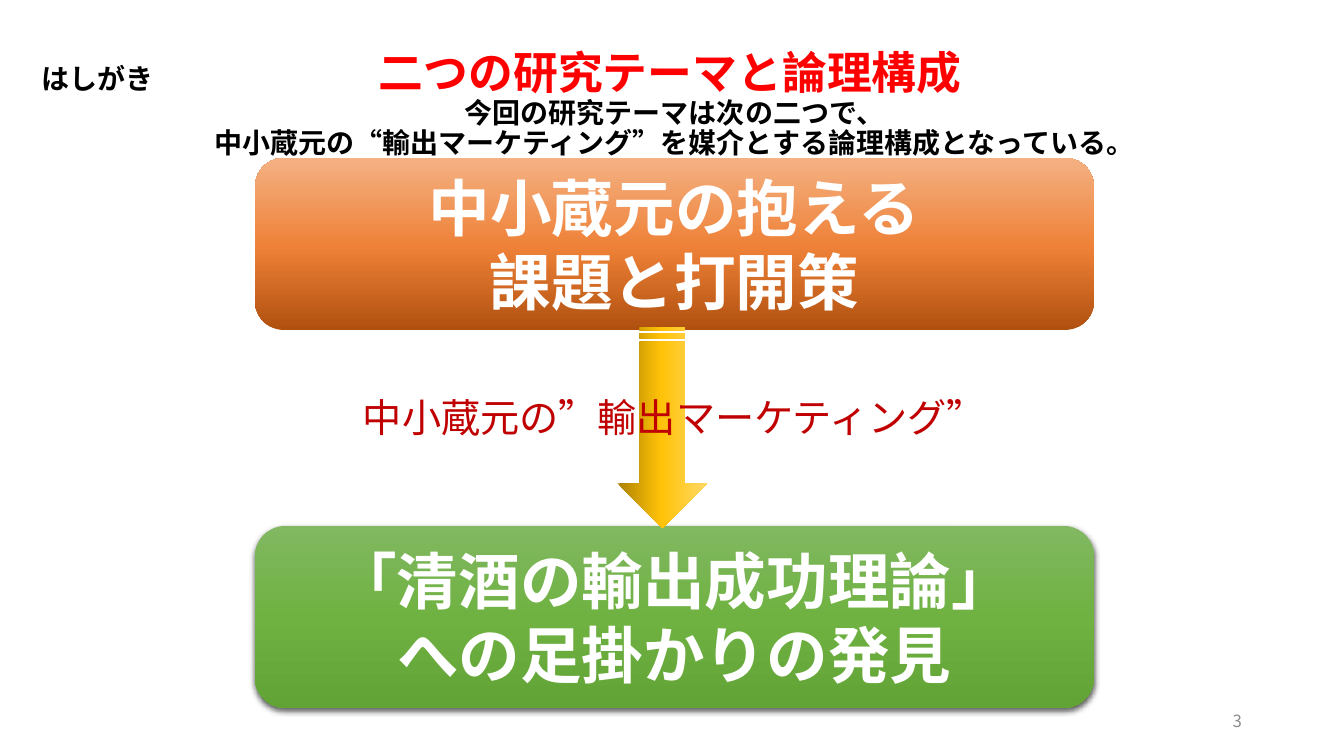
from lxml.etree import SubElement
from pptx import Presentation
from pptx.dml.color import RGBColor
from pptx.enum.shapes import MSO_SHAPE
from pptx.enum.text import MSO_ANCHOR, PP_ALIGN
from pptx.oxml.ns import qn
from pptx.util import Pt

BLACK = RGBColor(0x00, 0x00, 0x00)
WHITE = RGBColor(0xFF, 0xFF, 0xFF)
RED = RGBColor(0xFF, 0x00, 0x00)
DARK_RED = RGBColor(0xC0, 0x00, 0x00)
GRAY = RGBColor(0x8C, 0x8C, 0x8C)

# Gradient stops: (position in percent, colour)
ORANGE = [(0, RGBColor(0xB0, 0x50, 0x0F)), (48, RGBColor(0xEE, 0x81, 0x37)),
          (100, RGBColor(0xF4, 0xB1, 0x83))]
GREEN = [(0, RGBColor(0x81, 0xB8, 0x61)), (50, RGBColor(0x6F, 0xB2, 0x42)),
         (100, RGBColor(0x62, 0xA3, 0x36))]
GOLD = [(0, RGBColor(0xAB, 0x81, 0x00)), (48, RGBColor(0xFF, 0xC2, 0x08)),
        (100, RGBColor(0xFF, 0xD9, 0x66))]
UPWARD, DOWNWARD = 90, 270

SLIDE_WIDTH, SLIDE_HEIGHT = 1344, 756
SCALE = 12192000 / SLIDE_WIDTH


def px(length):
    return round(length * SCALE)


class SlideBuilder:
    font_name = "Noto Sans CJK JP"

    def __init__(self, deck):
        self.page = deck.slides.add_slide(deck.slide_layouts[6])

    def span(self, para, text, size, color, bold=False):
        span = para.add_run()
        span.text = text
        span.font.color.rgb = color
        for name, value in {"size": Pt(size), "bold": bold, "name": self.font_name}.items():
            setattr(span.font, name, value)
        east_asian = SubElement(span.font._element, qn("a:ea"))
        east_asian.set("typeface", self.font_name)

    def fill_text(self, box, lines, anchor=MSO_ANCHOR.MIDDLE, **para_format):
        """Each line is a list of spans: (text, size, color, bold)."""
        frame = box.text_frame
        for name, value in {"word_wrap": True, "vertical_anchor": anchor}.items():
            setattr(frame, name, value)
        for index, spans in enumerate(lines):
            para = frame.add_paragraph() if index else frame.paragraphs[0]
            for name, value in {"alignment": PP_ALIGN.CENTER, **para_format}.items():
                setattr(para, name, value)
            for parts in spans:
                self.span(para, *parts)

    def text(self, area, lines, **settings):
        box = self.page.shapes.add_textbox(*map(px, area))
        self.fill_text(box, lines, **settings)
        return box

    def tab_stop(self, para, position):
        tabs = SubElement(para._p.get_or_add_pPr(), qn("a:tabLst"))
        SubElement(tabs, qn("a:tab"), pos=str(px(position)), algn="l")

    def gradient_shape(self, kind, area, stops, angle):
        shape = self.page.shapes.add_shape(kind, *map(px, area))
        shape.shadow.inherit = False
        shape.line.fill.background()
        shape.fill.gradient()
        shape.fill.gradient_angle = angle
        stop_list = shape._element.spPr.find(".//" + qn("a:gsLst"))
        for old_stop in list(stop_list):
            stop_list.remove(old_stop)
        for position, color in stops:
            stop = SubElement(stop_list, qn("a:gs"), pos=str(position * 1000))
            SubElement(stop, qn("a:srgbClr"), val=str(color))
        return shape

    def panel(self, area, stops, angle, lines):
        panel = self.gradient_shape(MSO_SHAPE.ROUNDED_RECTANGLE, area, stops, angle)
        self.fill_text(panel, [[(line, 44, WHITE, True)] for line in lines])
        return panel

    def drop_shadow(self, shape):
        effects = shape._element.spPr.find(qn("a:effectLst"))
        shadow = SubElement(effects, qn("a:outerShdw"), blurRad=str(Pt(4.5)),
                            dist=str(Pt(1.5)), dir="5400000", rotWithShape="0")
        color = SubElement(shadow, qn("a:srgbClr"), val=str(BLACK))
        SubElement(color, qn("a:alpha"), val="63000")


def main():
    deck = Presentation()
    deck.slide_width, deck.slide_height = px(SLIDE_WIDTH), px(SLIDE_HEIGHT)
    builder = SlideBuilder(deck)

    # Heading and introduction
    heading = builder.text((32, 46, 1285, 654), [
        [("はしがき\t", 20, BLACK, True), ("二つの研究テーマと論理構成", 32, RED, True)],
        [("今回の研究テーマは次の二つで、", 20, BLACK, True)],
        [("中小蔵元の“輸出マーケティング”を媒介とする論理構成となっている。", 20, BLACK, True)],
    ], anchor=MSO_ANCHOR.TOP, line_spacing=0.9)
    first = heading.text_frame.paragraphs[0]
    first.alignment, first.space_before = PP_ALIGN.LEFT, Pt(10)
    builder.tab_stop(first, 337)

    # Slide number
    builder.text((950, 701, 302, 40), [[("3", 12, GRAY)]], alignment=PP_ALIGN.RIGHT)

    # The two research themes
    builder.panel((255, 158, 839, 172), ORANGE, UPWARD, ["中小蔵元の抱える", "課題と打開策"])
    goal = builder.panel((255, 526, 839, 182), GREEN, DOWNWARD,
                         ["「清酒の輸出成功理論」", "への足掛かりの発見"])
    builder.drop_shadow(goal)

    # Arrow between the themes and its label
    arrow = builder.gradient_shape(MSO_SHAPE.STRIPED_RIGHT_ARROW, (562, 383, 201, 90),
                                   GOLD, UPWARD)
    arrow.rotation = 90
    builder.text((336, 388, 677, 57), [[("中小蔵元の”輸出マーケティング”", 28, DARK_RED)]],
                 anchor=MSO_ANCHOR.TOP)

    deck.save("out.pptx")


if __name__ == "__main__":
    main()
